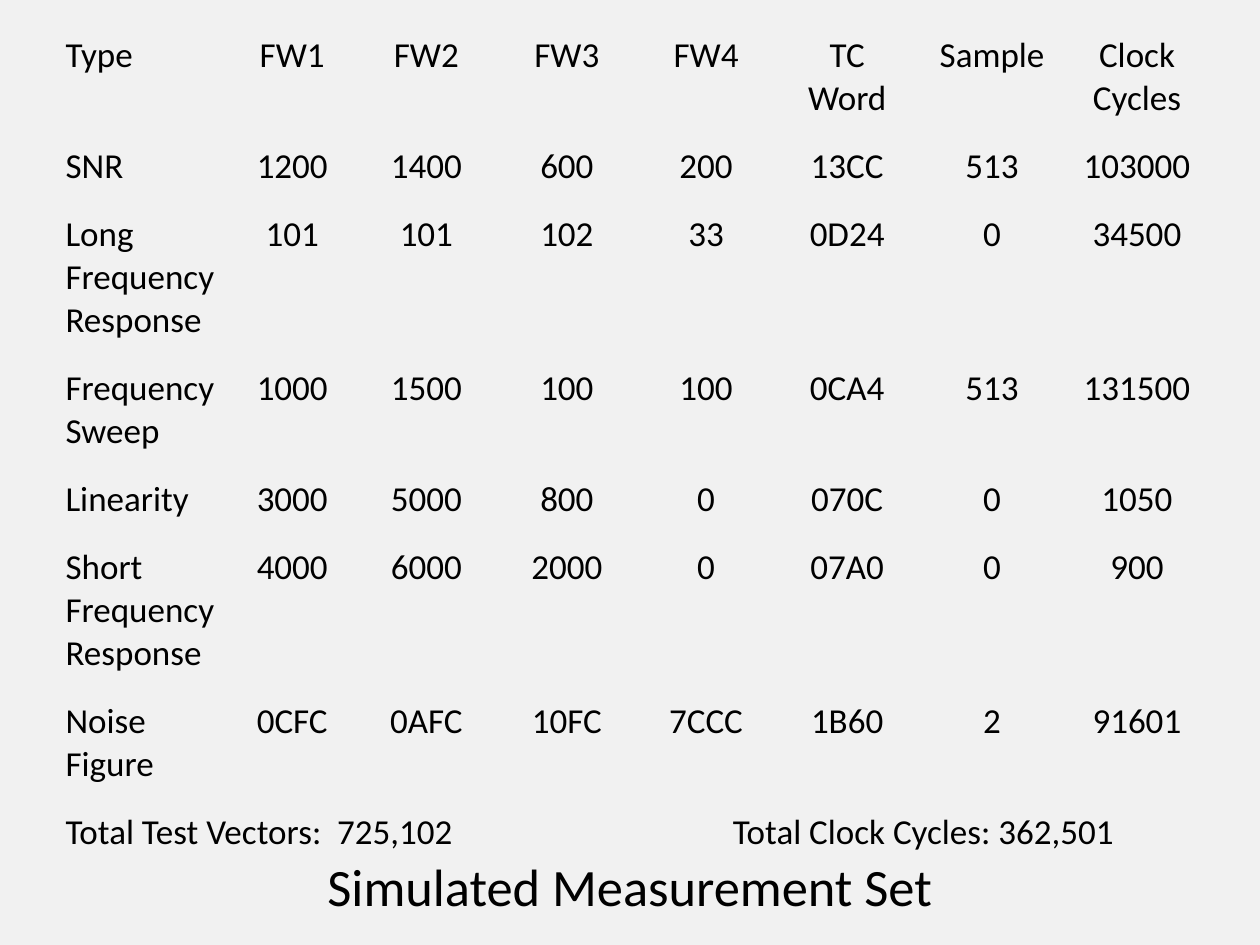
from typing import NamedTuple

from pptx import Presentation
from pptx.dml.color import RGBColor
from pptx.enum.text import MSO_ANCHOR, PP_ALIGN
from pptx.util import Inches, Pt

BACKGROUND = RGBColor(0xF1, 0xF1, 0xF1)
INK = RGBColor(0x00, 0x00, 0x00)
FONT = "Calibri"
MARGIN = Inches(0.1)
ROW_HEIGHT = Inches(0.48)
COLUMN_WIDTHS = (1.39, 1.02, 1.11, 1.12, 1.09, 1.15, 1.15, 1.15)
NO_STYLE_NO_GRID = "{2D5ABB26-0587-4C30-8999-92F81FD0307C}"
SECTION_HEADER = 2


class Measurement(NamedTuple):
    type: str
    fw1: str
    fw2: str
    fw3: str
    fw4: str
    tc_word: str
    sample: str
    clock_cycles: str


class Total(NamedTuple):
    text: str
    first_col: int
    last_col: int
    align: PP_ALIGN


ROWS = (
    Measurement("Type", "FW1", "FW2", "FW3", "FW4", "TC Word", "Sample", "Clock Cycles"),
    Measurement("SNR", "1200", "1400", "600", "200", "13CC", "513", "103000"),
    Measurement("Long Frequency Response", "101", "101", "102", "33", "0D24", "0", "34500"),
    Measurement("Frequency Sweep", "1000", "1500", "100", "100", "0CA4", "513", "131500"),
    Measurement("Linearity", "3000", "5000", "800", "0", "070C", "0", "1050"),
    Measurement("Short Frequency Response", "4000", "6000", "2000", "0", "07A0", "0", "900"),
    Measurement("Noise Figure", "0CFC", "0AFC", "10FC", "7CCC", "1B60", "2", "91601"),
)
TOTALS = (
    Total("Total Test Vectors:  725,102", 0, 3, PP_ALIGN.LEFT),
    Total("Total Clock Cycles: 362,501", 4, 7, PP_ALIGN.CENTER),
)


def write(tf, text: str, size: int, align: PP_ALIGN) -> None:
    p = tf.paragraphs[0]
    p.alignment = align
    p.space_before = Pt(0)
    r = p.add_run()
    r.text = text
    r.font.size = Pt(size)
    r.font.name = FONT
    r.font.color.rgb = INK


def set_margins(box) -> None:
    """Give a cell or a text frame the same inset on all sides."""
    box.margin_left = box.margin_right = MARGIN
    box.margin_top = box.margin_bottom = MARGIN


def add_measurements(s) -> None:
    height = Inches(6.6)
    frame = s.shapes.add_table(len(ROWS) + 1, len(COLUMN_WIDTHS), Inches(0.42),
                               Inches(0.17), Inches(sum(COLUMN_WIDTHS)), height)
    table = frame.table
    table.first_row = table.horz_banding = False
    table._tbl.tblPr.find("{*}tableStyleId").text = NO_STYLE_NO_GRID
    for column, width in zip(table.columns, COLUMN_WIDTHS):
        column.width = Inches(width)
    for row in table.rows:
        row.height = ROW_HEIGHT
    frame.height = height

    for cell in table.iter_cells():
        set_margins(cell)
        cell.fill.background()
    for i, measurement in enumerate(ROWS):
        for j, text in enumerate(measurement):
            align = PP_ALIGN.CENTER if j else PP_ALIGN.LEFT
            write(table.cell(i, j).text_frame, text, 20, align)
    for total in TOTALS:
        cell = table.cell(len(ROWS), total.first_col)
        cell.merge(table.cell(len(ROWS), total.last_col))
        write(cell.text_frame, total.text, 20, total.align)


def place_caption(body) -> None:
    body.left, body.top = Inches(0.3), Inches(6.73)
    body.width, body.height = Inches(9.4), Inches(0.6)
    tf = body.text_frame
    tf.vertical_anchor = MSO_ANCHOR.MIDDLE
    set_margins(tf)
    write(tf, "Simulated Measurement Set", 30, PP_ALIGN.CENTER)


def main() -> None:
    prs = Presentation()
    prs.slide_width, prs.slide_height = Inches(10), Inches(7.5)
    s = prs.slides.add_slide(prs.slide_layouts[SECTION_HEADER])
    s.background.fill.solid()
    s.background.fill.fore_color.rgb = BACKGROUND
    title = s.shapes.title.element
    title.getparent().remove(title)
    add_measurements(s)
    place_caption(s.placeholders[1])
    prs.save("out.pptx")


if __name__ == "__main__":
    main()
